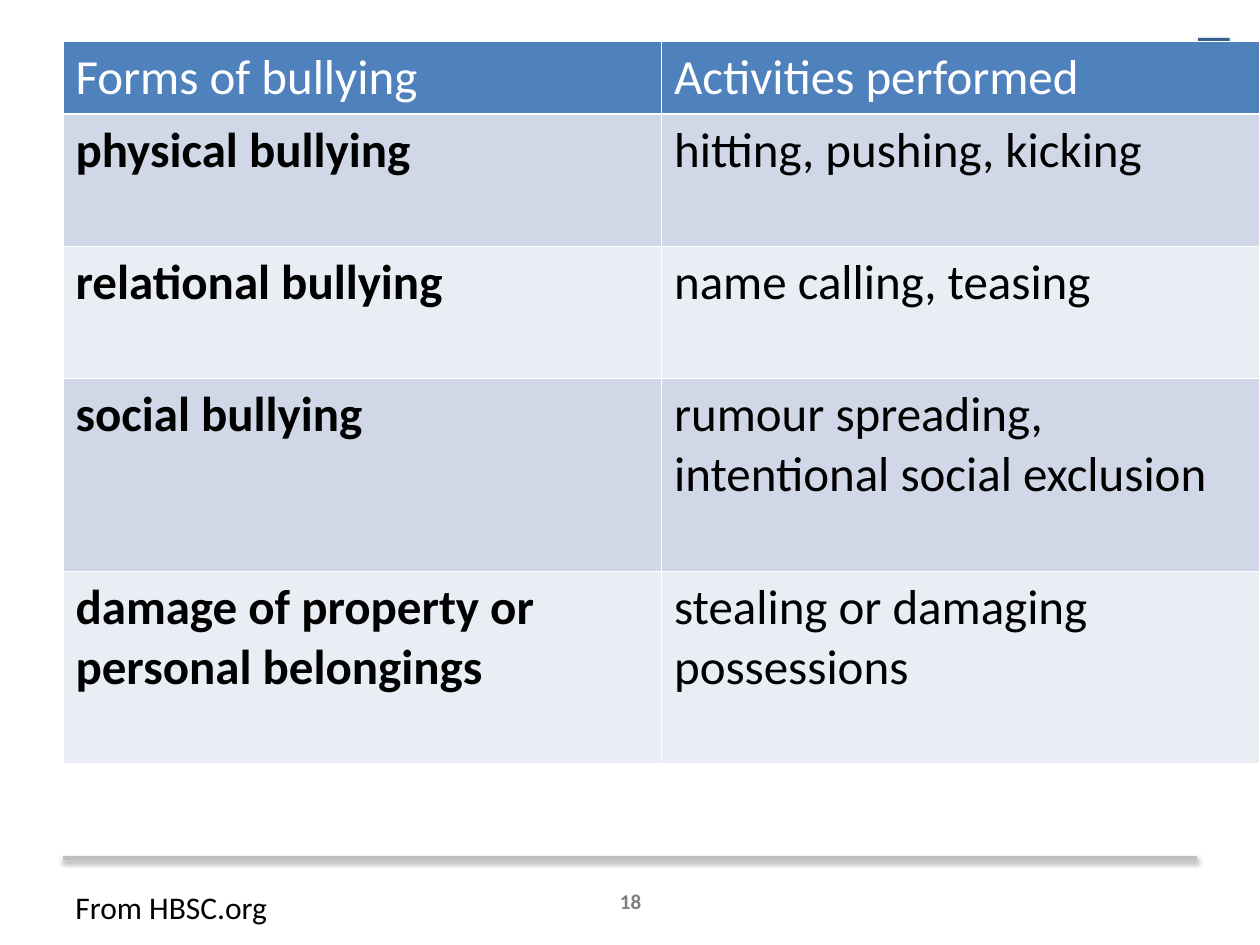
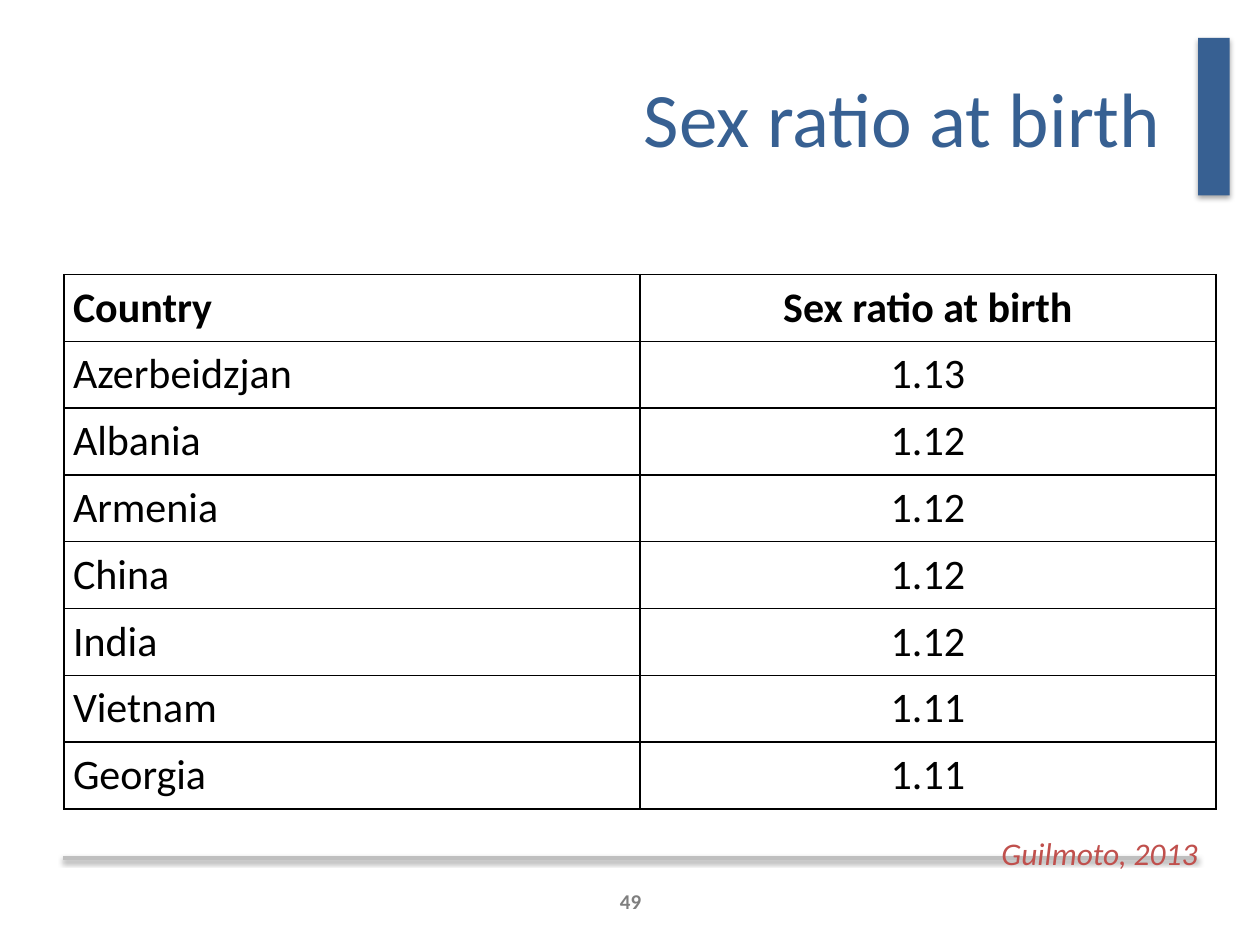
from lxml.etree import SubElement
from pptx import Presentation
from pptx.dml.color import RGBColor
from pptx.enum.shapes import MSO_CONNECTOR, MSO_SHAPE
from pptx.enum.text import MSO_ANCHOR as Anchor, PP_ALIGN as Align
from pptx.oxml import parse_xml
from pptx.oxml.ns import nsdecls, qn
from pptx.util import Inches, Pt

FORMS_PAGE = 18
FORMS_SOURCE = "From HBSC.org"
FORMS = [
    ("Forms of bullying", "Activities performed"),
    ("physical bullying", "hitting, pushing, kicking"),
    ("relational bullying", "name calling, teasing"),
    ("social bullying", "rumour spreading, intentional social exclusion"),
    ("damage of property or personal belongings", "stealing or damaging possessions"),
]
FORMS_ROW_HEIGHTS = [0.57, 1.05, 1.05, 1.53, 1.53]

RATIO_PAGE = 49
RATIO_TITLE = "Sex ratio at birth"
RATIO_SOURCE = "Guilmoto, 2013"
RATIOS = [
    ("Country", "Sex ratio at birth"),
    ("Azerbeidzjan", "1.13"),
    ("Albania", "1.12"),
    ("Armenia", "1.12"),
    ("China", "1.12"),
    ("India", "1.12"),
    ("Vietnam", "1.11"),
    ("Georgia", "1.11"),
]

FONT = "Calibri"
NAVY = RGBColor(0x37, 0x60, 0x92)
BLUE = RGBColor(0x4F, 0x81, 0xBD)
BAND_DARK = RGBColor(0xD0, 0xD8, 0xE8)
BAND_LIGHT = RGBColor(0xE9, 0xED, 0xF4)
RULE_GRAY = RGBColor(0xBF, 0xBF, 0xBF)
NUMBER_GRAY = RGBColor(0x7F, 0x7F, 0x7F)
RED = RGBColor(0xC0, 0x50, 0x4D)
BLACK = RGBColor(0, 0, 0)
WHITE = RGBColor(0xFF, 0xFF, 0xFF)


def style_text(frame, text, size, color, bold=False, italic=False, align=Align.LEFT):
    para = frame.paragraphs[0]
    para.text = text
    para.alignment = align
    font = para.font
    font.name, font.size, font.bold, font.italic = FONT, Pt(size), bold, italic
    font.color.rgb = color
    return para


def add_text(page, place, text, size, color, anchor=Anchor.TOP, wrap=True, **style):
    frame = page.shapes.add_textbox(*map(Inches, place)).text_frame
    frame.word_wrap = wrap
    frame.vertical_anchor = anchor
    style_text(frame, text, size, color, **style)


def add_shadow(shape, opacity, distance):
    shape._element.spPr.append(parse_xml(
        f'<a:effectLst {nsdecls("a")}>'
        f'<a:outerShdw blurRad="{Pt(3.1)}" dist="{Pt(distance)}" dir="5400000" rotWithShape="0">'
        f'<a:srgbClr val="000000"><a:alpha val="{opacity * 1000}"/></a:srgbClr>'
        '</a:outerShdw></a:effectLst>'))


def add_page(deck):
    page = deck.slides.add_slide(deck.slide_layouts[6])
    bar = page.shapes.add_shape(MSO_SHAPE.RECTANGLE, *map(Inches, (9.51, 0.3, 0.25, 1.25)))
    bar.fill.solid()
    bar.fill.fore_color.rgb = NAVY
    bar.line.fill.background()
    add_shadow(bar, 35, 1.8)
    rule = page.shapes.add_connector(MSO_CONNECTOR.STRAIGHT, *map(Inches, (0.5, 6.81, 9.5, 6.81)))
    rule.line.color.rgb = RULE_GRAY
    rule.line.width = Pt(2)
    add_shadow(rule, 38, 1.6)
    return page


def add_page_number(page, number):
    add_text(page, (3.42, 6.95, 3.17, 0.4), str(number), 12, NUMBER_GRAY,
             anchor=Anchor.MIDDLE, bold=True, align=Align.CENTER)


def set_borders(cell, color):
    properties = cell._tc.get_or_add_tcPr()
    for index, side in enumerate(("lnL", "lnR", "lnT", "lnB")):
        line = SubElement(properties, qn(f"a:{side}"), w=str(Pt(1)))
        fill = SubElement(line, qn("a:solidFill"))
        SubElement(fill, qn("a:srgbClr"), val=str(color))
        properties.insert(index, line)


def add_grid(page, left, top, width, row_heights, border):
    count = len(row_heights)
    table = page.shapes.add_table(
        count, 2, *map(Inches, (left, top, width, sum(row_heights)))).table
    for row, height in zip(table.rows, row_heights):
        row.height = Inches(height)
    for cell in table.iter_cells():
        set_borders(cell, border)
    return table


def build_forms(deck):
    page = add_page(deck)
    table = add_grid(page, 0.5, 0.33, 9.5, FORMS_ROW_HEIGHTS, WHITE)
    for row, texts in enumerate(FORMS):
        header = row == 0
        band = BLUE if header else (BAND_LIGHT, BAND_DARK)[row % 2]
        for column, text in enumerate(texts):
            cell = table.cell(row, column)
            cell.fill.solid()
            cell.fill.fore_color.rgb = band
            style_text(cell.text_frame, text, 28, WHITE if header else BLACK,
                       bold=not header and column == 0)
    add_page_number(page, FORMS_PAGE)
    add_text(page, (0.5, 7, 2.75, 0.5), FORMS_SOURCE, 18, BLACK)


def build_ratios(deck):
    page = add_page(deck)
    add_text(page, (0.5, 0.3, 8.81, 1.25), RATIO_TITLE, 44, NAVY,
             anchor=Anchor.MIDDLE, align=Align.RIGHT)
    table = add_grid(page, 0.51, 2.18, 9.14, [0.53] * len(RATIOS), BLACK)
    for row, texts in enumerate(RATIOS):
        for column, text in enumerate(texts):
            cell = table.cell(row, column)
            cell.fill.background()
            cell.margin_left = cell.margin_right = Inches(0.07)
            cell.margin_top = cell.margin_bottom = 0
            para = style_text(cell.text_frame, text, 24, BLACK, bold=row == 0,
                              align=(Align.LEFT, Align.CENTER)[column])
            para.line_spacing = 1.15
    add_page_number(page, RATIO_PAGE)
    add_text(page, (7.85, 6.57, 1.8, 0.4), RATIO_SOURCE, 18, RED, wrap=False, italic=True)


def main():
    deck = Presentation()
    deck.slide_width, deck.slide_height = Inches(10), Inches(7.5)
    build_forms(deck)
    build_ratios(deck)
    deck.save("out.pptx")


if __name__ == "__main__":
    main()
